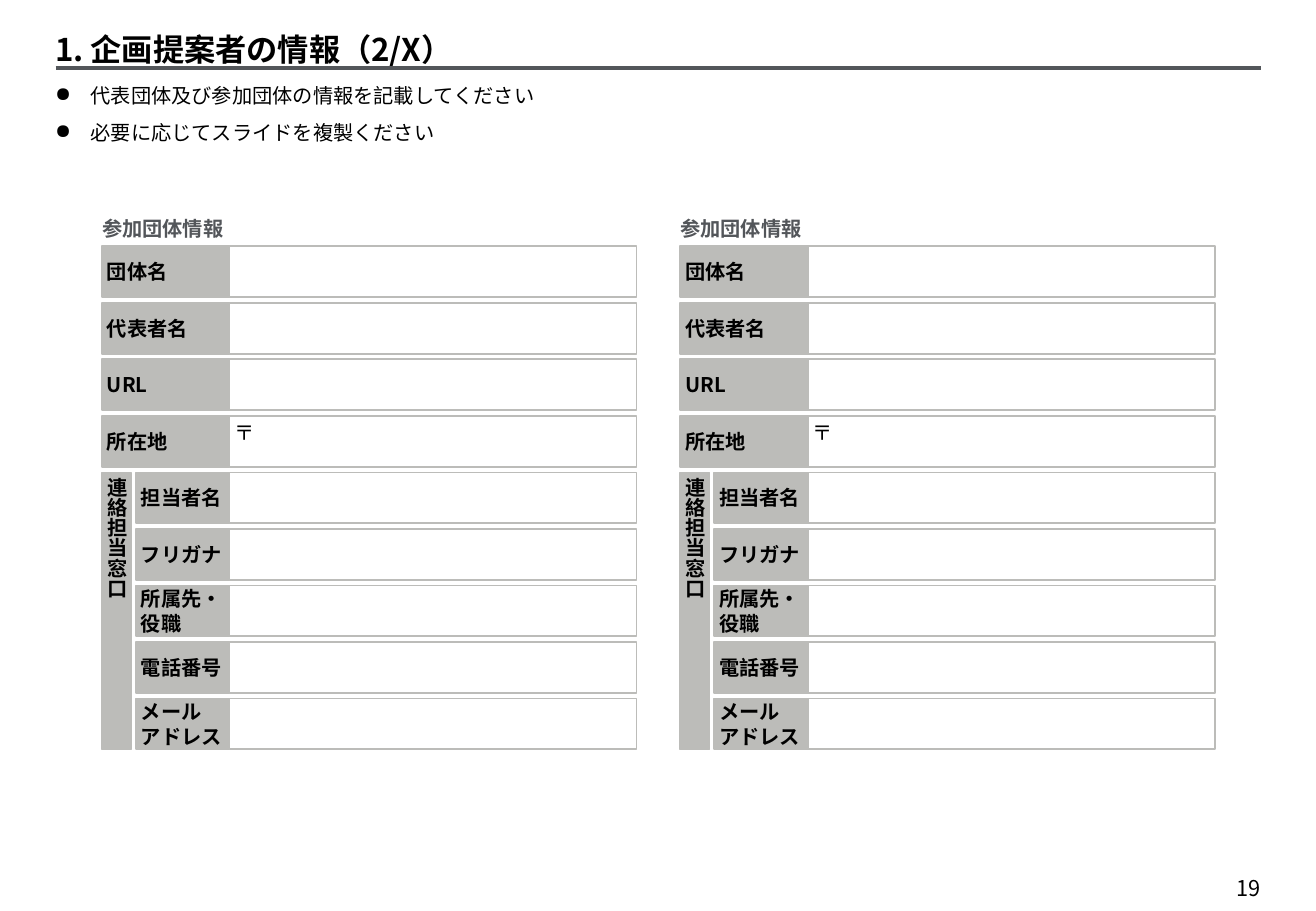
from lxml import etree
from pptx import Presentation
from pptx.dml.color import RGBColor
from pptx.enum.shapes import MSO_CONNECTOR as LINE, MSO_SHAPE as SHAPE
from pptx.enum.text import MSO_ANCHOR as ANCHOR, PP_ALIGN as ALIGN
from pptx.oxml.ns import qn
from pptx.util import Pt

# Content
TITLE = "1. 企画提案者の情報（2/X）"
NOTES = ["代表団体及び参加団体の情報を記載してください",
         "必要に応じてスライドを複製ください"]
HEAD = "参加団体情報"
GROUP = "連絡担当窓口"
# label lines, entry text, part of the contact group
ROWS = [
    (["団体名"], "", False),
    (["代表者名"], "", False),
    (["URL"], "", False),
    (["所在地"], "〒", False),
    (["担当者名"], "", True),
    (["フリガナ"], "", True),
    (["所属先・", "役職"], "", True),
    (["電話番号"], "", True),
    (["メール", "アドレス"], "", True),
]
PAGE = "19"

FONT = "Noto Sans CJK JP"
COLORS = {"text": "000000", "rule": "53565A", "gray": "BCBCB9"}

# Layout in points
LEFTS = [60.5, 403.2]
TOP, PITCH, HIGH = 146, 33.5, 30.2
LABEL, ENTRY, SIDE, INDENT = 75.6, 241.2, 17.3, 20.2
PAD = 2.88


def color(key):
    return RGBColor.from_string(COLORS[key])


def write(shape, lines, size=12, key="text", bold=False, pad=0,
          anchor=ANCHOR.TOP, align=ALIGN.LEFT, wrap=True, space=None,
          gap=0, bullet=None):
    frame = shape.text_frame
    frame.word_wrap = wrap
    frame.vertical_anchor = anchor
    frame.margin_left = frame.margin_right = Pt(pad)
    frame.margin_top = frame.margin_bottom = Pt(pad)
    for i, line in enumerate(lines):
        para = frame.add_paragraph() if i else frame.paragraphs[0]
        if bullet:
            props = para._p.get_or_add_pPr()
            props.set("marL", str(Pt(21)))
            props.set("indent", str(-Pt(21)))
            etree.SubElement(props, qn("a:buChar")).set("char", bullet)
        para.alignment = align
        para.space_before = Pt(gap if i else 0)
        if space:
            para.line_spacing = space
        run = para.add_run()
        run.text = line
        font = run.font
        font.size, font.bold, font.name = Pt(size), bold, FONT
        font.color.rgb = color(key)
        east = etree.SubElement(run._r.get_or_add_rPr(), qn("a:ea"))
        east.set("typeface", FONT)


def text(x, y, w, h, lines, **style):
    box = slide.shapes.add_textbox(Pt(x), Pt(y), Pt(w), Pt(h))
    write(box, lines, **style)


def cell(x, y, w, h, fill=False):
    box = slide.shapes.add_shape(SHAPE.RECTANGLE, Pt(x), Pt(y), Pt(w), Pt(h))
    box.shadow.inherit = False
    box.line.color.rgb = color("gray")
    box.line.width = Pt(1)
    if fill:
        box.fill.solid()
        box.fill.fore_color.rgb = color("gray")
    else:
        box.fill.background()
    return box


def form(x):
    text(x, 128, LABEL + ENTRY, 14.4, [HEAD], key="rule", bold=True)
    for i, (label, entry, inner) in enumerate(ROWS):
        y = TOP + i * PITCH
        shift = INDENT if inner else 0
        box = cell(x + shift, y, LABEL - shift, HIGH, fill=True)
        write(box, label, bold=True, pad=PAD, anchor=ANCHOR.MIDDLE, wrap=False)
        box = cell(x + LABEL, y, ENTRY, HIGH)
        if entry:
            write(box, [entry], pad=PAD, wrap=False)
    # Vertical group label beside the contact rows
    inside = [i for i, row in enumerate(ROWS) if row[2]]
    high = (len(inside) - 1) * PITCH + HIGH
    box = cell(x, TOP + inside[0] * PITCH, SIDE, high, fill=True)
    write(box, [GROUP], bold=True, pad=PAD, anchor=ANCHOR.MIDDLE,
          align=ALIGN.CENTER, wrap=False)
    box.text_frame._txBody.bodyPr.set("vert", "eaVert")


deck = Presentation()
deck.slide_width, deck.slide_height = Pt(780), Pt(540)
slide = deck.slides.add_slide(deck.slide_layouts[5])

# Title and rule
rule = slide.shapes.add_connector(LINE.STRAIGHT, Pt(33), Pt(40.4), Pt(747.4), Pt(40.4))
rule.line.color.rgb = color("rule")
rule.line.width = Pt(2.25)
etree.SubElement(rule._element.spPr, qn("a:effectLst"))
title = slide.shapes.title
title.left, title.top, title.width, title.height = Pt(32.7), Pt(12.3), Pt(714.3), Pt(28)
write(title, [TITLE], size=18.5, bold=True, anchor=ANCHOR.BOTTOM, space=1.1)

# Instructions and page number
text(32.7, 48.2, 714.3, 57, NOTES, space=1.1, gap=6, bullet="●")
text(733, 519, 14.4, 14.4, [PAGE], size=12.9, anchor=ANCHOR.MIDDLE,
     align=ALIGN.CENTER, wrap=False)

# Two entry forms
for left in LEFTS:
    form(left)

deck.save("out.pptx")
